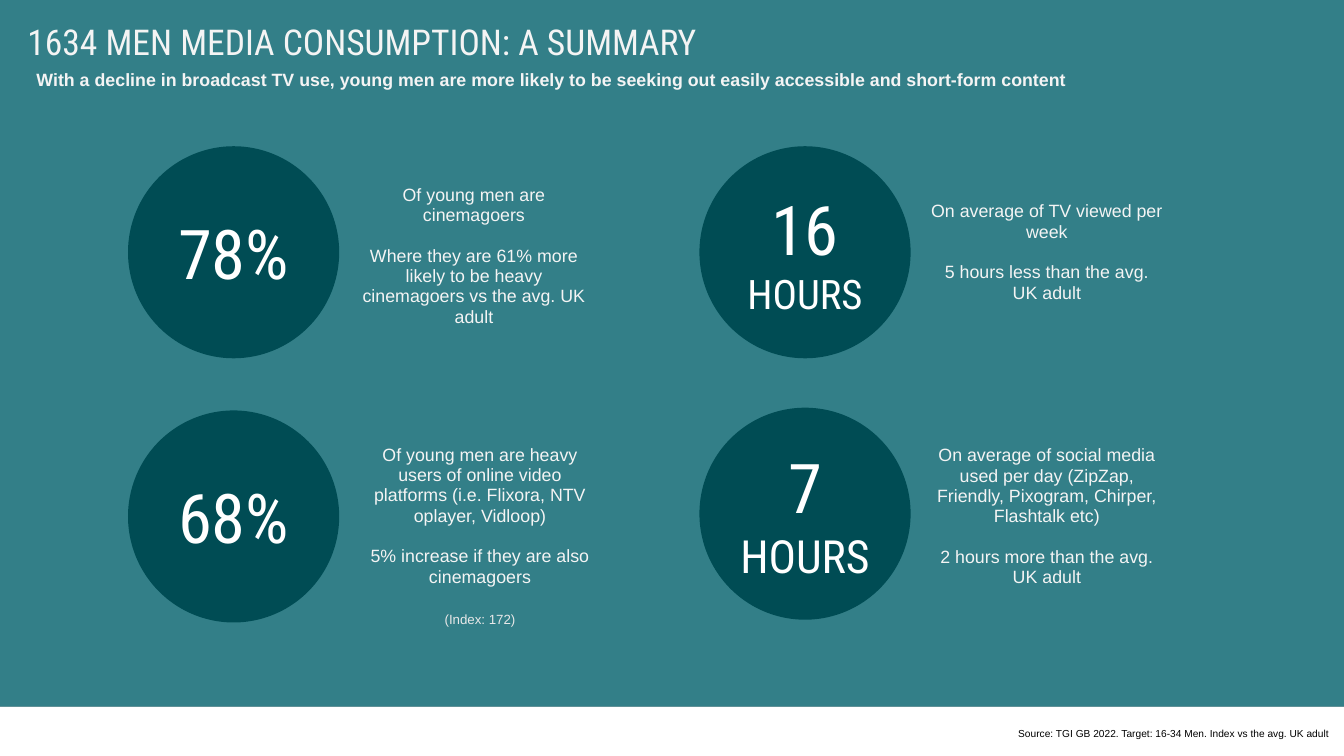
import lxml.etree
import pptx
import pptx.dml.color
import pptx.enum.shapes
import pptx.enum.text
import pptx.oxml.ns
import pptx.util

Pt = pptx.util.Pt
RGBColor = pptx.dml.color.RGBColor
ALIGN = pptx.enum.text.PP_ALIGN
ANCHOR = pptx.enum.text.MSO_ANCHOR
SHAPE = pptx.enum.shapes.MSO_SHAPE
qn = pptx.oxml.ns.qn

TEAL = RGBColor(0x00, 0x60, 0x6B)
DARK_TEAL = RGBColor(0x00, 0x4C, 0x54)
PALE = RGBColor(0xF4, 0xF4, 0xF4)
SILVER = RGBColor(0xE8, 0xE8, 0xE8)
RULE_GREY = RGBColor(0xCA, 0xC8, 0xC8)
WHITE = RGBColor(0xFF, 0xFF, 0xFF)
BLACK = RGBColor(0x00, 0x00, 0x00)

HEADING_FONT = "Roboto Condensed"
BODY_FONT = "Arial"
SLIDE_WIDTH, SLIDE_HEIGHT = 1058.4, 595.44
PANEL_HEIGHT = 556.56
BODY_SIZE, BODY_LEADING = 14, 16
CIRCLE_WIDTH, CIRCLE_HEIGHT = 166.3, 167
FIGURE_SIZE = 54


class Page:
    """One slide together with the style of its elements."""

    def __init__(self, deck):
        self.slide = deck.slides.add_slide(deck.slide_layouts[6])
        self.shapes = self.slide.shapes

    def set_frame(self, frame, inset=(0, 0), anchor=ANCHOR.MIDDLE, wrap=True):
        frame.word_wrap = wrap
        frame.vertical_anchor = anchor
        frame.margin_left = frame.margin_right = Pt(inset[0])
        frame.margin_top = frame.margin_bottom = Pt(inset[1])

    def add_span(self, para, words, size, color, font=BODY_FONT, bold=False):
        span = para.add_run()
        span.text = words
        span.font.size = Pt(size)
        span.font.name = font
        span.font.bold = bold
        span.font.color.rgb = color

    def shape(self, kind, left, top, width, height, fill):
        shape = self.shapes.add_shape(kind, Pt(left), Pt(top), Pt(width), Pt(height))
        shape.shadow.inherit = False
        shape.fill.solid()
        shape.fill.fore_color.rgb = fill
        shape.line.fill.background()
        return shape

    def panel(self, height, fill, opacity):
        panel = self.shape(SHAPE.RECTANGLE, 0, 0, SLIDE_WIDTH, height, fill)
        color = panel._element.spPr.find(".//" + qn("a:srgbClr"))
        lxml.etree.SubElement(color, qn("a:alpha"), val=str(opacity * 1000))

    def rule(self, top, color):
        rule = self.shapes.add_connector(
            pptx.enum.shapes.MSO_CONNECTOR.STRAIGHT, 0, Pt(top), Pt(SLIDE_WIDTH), Pt(top))
        rule.line.color.rgb = color
        rule.line.width = Pt(0.5)
        lxml.etree.SubElement(rule._element.spPr, qn("a:effectLst"))

    def circle(self, left, top, spans):
        circle = self.shape(SHAPE.OVAL, left, top, CIRCLE_WIDTH, CIRCLE_HEIGHT, DARK_TEAL)
        self.set_frame(circle.text_frame)
        para = circle.text_frame.paragraphs[0]
        para.alignment = ALIGN.CENTER
        for words, size in spans:
            self.add_span(para, words, size, WHITE, HEADING_FONT)

    def text(self, area, paragraphs, align=ALIGN.LEFT, leading=None, gap=0,
             font=BODY_FONT, bold=False, **frame_style):
        box = self.shapes.add_textbox(*(Pt(length) for length in area))
        self.set_frame(box.text_frame, **frame_style)
        for index, (words, size, color) in enumerate(paragraphs):
            para = box.text_frame.add_paragraph() if index else box.text_frame.paragraphs[0]
            para.alignment = align
            if leading:
                para.line_spacing = Pt(leading)
            para.space_before = Pt(gap if index else 0)
            self.add_span(para, words, size, color, font, bold)


# Circle position, circle spans, caption area, caption paragraphs, footnote
FACTS = [
    ((100.8, 115.2), [("78%", FIGURE_SIZE)], (284.4, 160.6, 177.8, 81.4),
     ["Of young men are cinemagoers",
      "Where they are 61% more likely to be heavy cinemagoers vs the avg. UK adult"], None),
    ((100.8, 323.3), [("68%", FIGURE_SIZE)], (286.6, 381.5, 182.9, 81.4),
     ["Of young men are heavy users of online video platforms (i.e. Flixora, NTV oplayer, Vidloop)",
      "5% increase if they are also cinemagoers"], "(Index: 172)"),
    ((550.8, 115.2), [("16 ", FIGURE_SIZE), ("HOURS", 32)], (733, 157.7, 182.9, 81.4),
     ["On average of TV viewed per week", "5 hours less than the avg. UK adult"], None),
    ((550.8, 321.1), [("7 ", FIGURE_SIZE), ("HOURS", 36)], (733, 365.8, 182.9, 81.4),
     ["On average of social media used per day (ZipZap, Friendly, Pixogram, Chirper, Flashtalk etc)",
      "2 hours more than the avg. UK adult"], None),
]


def main():
    deck = pptx.Presentation()
    deck.slide_width, deck.slide_height = Pt(SLIDE_WIDTH), Pt(SLIDE_HEIGHT)
    page = Page(deck)

    # Background
    page.rule(PANEL_HEIGHT, RULE_GREY)
    page.panel(PANEL_HEIGHT, TEAL, 80)

    # Heading and source
    page.text((21.6, 21.6, 977.8, 21.6),
              [("1634 MEN MEDIA CONSUMPTION: A SUMMARY", 28, PALE)],
              font=HEADING_FONT, wrap=False)
    page.text((21.6, 52.6, 978.5, 34.6),
              [("With a decline in broadcast TV use, young men are more likely to be "
                "seeking out easily accessible and short-form content", BODY_SIZE, PALE)],
              leading=15, bold=True, inset=(7.2, 3.6), anchor=ANCHOR.TOP)
    page.text((590.4, 563.8, 456.5, 19),
              [("Source: TGI GB 2022. Target: 16-34 Men. Index vs the avg. UK adult", 8, BLACK)],
              align=ALIGN.RIGHT, leading=19)

    # Four facts
    for position, figure, area, caption, footnote in FACTS:
        page.circle(*position, figure)
        paragraphs = [(words, BODY_SIZE, PALE) for words in caption]
        if footnote:
            paragraphs.append((footnote, 10.5, SILVER))
        page.text(area, paragraphs, align=ALIGN.CENTER, leading=BODY_LEADING, gap=BODY_LEADING)

    deck.save("out.pptx")


if __name__ == "__main__":
    main()
